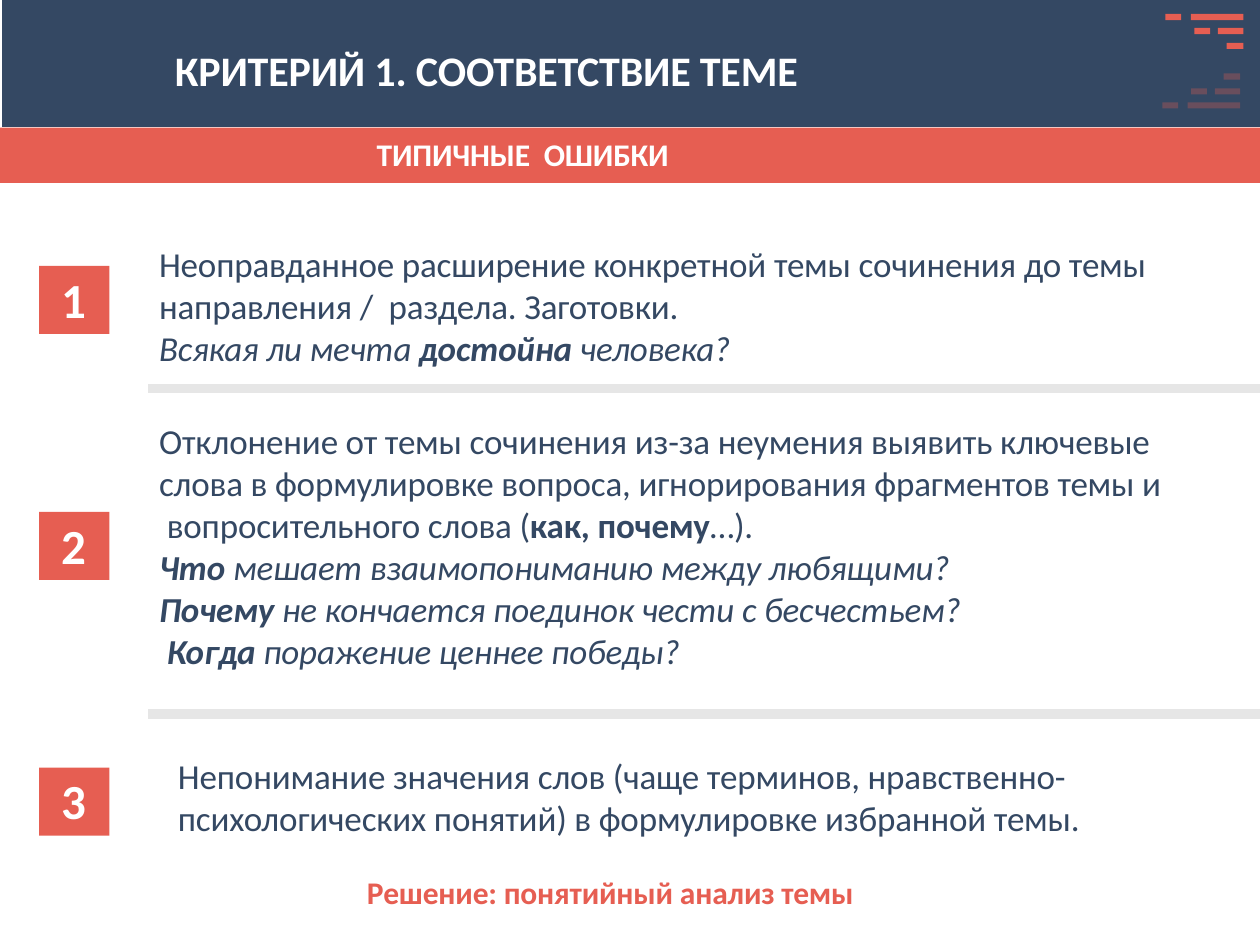
import pptx
import pptx.dml.color
import pptx.enum.shapes
import pptx.enum.text
import pptx.util

Pt = pptx.util.Pt
RGB = pptx.dml.color.RGBColor
NAVY = RGB(0x34, 0x48, 0x63)
CORAL = RGB(0xE6, 0x5E, 0x52)
GRAY = RGB(0xE6, 0xE6, 0xE6)
WHITE = RGB(0xFF, 0xFF, 0xFF)

# left, top, width of each dash in the corner
DASHES = [(666, 8, 9), (682.5, 16, 9), (701, 24.5, 9.5),
          (696, 16, 14.5), (680.5, 8, 30)]
DASH = 3.5

# A run is (text, style); b is bold, i is italic, \v breaks the line.
FIRST = [
    [("Неоправданное расширение конкретной темы сочинения до темы", "")],
    [("направления /  раздела. Заготовки.", "")],
    [("Всякая ли мечта ", "i"), ("достойна ", "bi"), ("человека?", "i")],
]
SECOND = [
    [("Отклонение от темы сочинения из-за неумения выявить ключевые \v"
      "слова в формулировке вопроса, игнорирования фрагментов темы и\v"
      " вопросительного слова (", ""), ("как, почему", "b"), ("…).", "")],
    [("Что ", "bi"), ("мешает взаимопониманию между любящими? \v", "i"),
     ("Почему ", "bi"), ("не кончается поединок чести с бесчестьем?\v", "i"),
     (" Когда ", "bi"), ("поражение ценнее победы?", "i")],
]
THIRD = [
    [("Непонимание значения слов (чаще терминов, нравственно-", "")],
    [("психологических понятий) в формулировке избранной темы.", "")],
]


def paint(shape, color):
    shape.shadow.inherit = False
    shape.fill.solid()
    shape.fill.fore_color.rgb = color
    shape.line.fill.background()


def outline(shapes, boxes, color, alpha=None):
    """Draw all boxes as one freeform; alpha is a percentage."""
    pen = None
    for x, y, w, h in boxes:
        left, top, right, low = Pt(x), Pt(y), Pt(x + w), Pt(y + h)
        if pen is None:
            pen = shapes.build_freeform(right, top)
        else:
            pen.move_to(right, top)
        pen.add_line_segments([(left, top), (left, low), (right, low)])
    shape = pen.convert_to_shape()
    paint(shape, color)
    if alpha is not None:
        tint = shape.fill._xPr.find(".//" + pptx.oxml.ns.qn("a:srgbClr"))
        node = pptx.oxml.parse_xml(
            f'<a:alpha {pptx.oxml.ns.nsdecls("a")} val="{alpha * 1000}"/>')
        tint.append(node)


def add_run(par, text, style):
    for n, part in enumerate(text.split("\v")):
        if n:
            par.add_line_break()
        if part:
            run = par.add_run()
            run.text = part
            run.font._element.set("spc", "-10")
            if "b" in style:
                run.font.bold = True
            if "i" in style:
                run.font.italic = True


def write(shape, pars, size, color, left=0.7, top=1.8):
    """Fill a shape with paragraphs, inset by left and top."""
    frame = shape.text_frame
    frame.word_wrap = True
    frame.vertical_anchor = pptx.enum.text.MSO_ANCHOR.TOP
    frame.margin_left, frame.margin_top = Pt(left), Pt(top)
    frame.margin_right = frame.margin_bottom = 0
    for n, runs in enumerate(pars):
        par = frame.add_paragraph() if n else frame.paragraphs[0]
        par.alignment = pptx.enum.text.PP_ALIGN.LEFT
        font = par.font
        font.name, font.size = "Calibri", Pt(size)
        font.color.rgb = color
        for text, style in runs:
            add_run(par, text, style)


def add_text(slide, box, *args, **inset):
    write(slide.shapes.add_textbox(*map(Pt, box)), *args, **inset)


def add_block(slide, box, text, size, **inset):
    kind = pptx.enum.shapes.MSO_SHAPE.RECTANGLE
    shape = slide.shapes.add_shape(kind, *map(Pt, box))
    paint(shape, CORAL)
    write(shape, [[(text, "b")]], size, WHITE, **inset)


def add_dashes(slide):
    """Draw the corner dashes and their faint mirror below."""
    shapes = slide.shapes.add_group_shape().shapes
    outline(shapes, [(x, y, w, DASH) for x, y, w in DASHES], CORAL)
    outline(shapes, [(x - 1.8, 66.5 - y, w, DASH) for x, y, w in DASHES],
            CORAL, 30)


def main():
    deck = pptx.Presentation()
    deck.slide_width, deck.slide_height = Pt(720), Pt(540)
    slide = deck.slides.add_slide(deck.slide_layouts[6])

    outline(slide.shapes, [(1.4, 0, 718.6, 72.7)], NAVY)
    add_text(slide, (0, 0, 720, 72.7),
             [[("КРИТЕРИЙ 1. СООТВЕТСТВИЕ ТЕМЕ", "b")]], 24, WHITE,
             left=100, top=25.6)
    add_dashes(slide)
    add_block(slide, (0, 72.9, 720, 31.7), "ТИПИЧНЫЕ  ОШИБКИ", 18,
              left=215.3, top=4.3)

    for n, top in enumerate((152, 292.5, 438.7), 1):
        add_block(slide, (22.4, top, 40.2, 38.9), str(n), 28,
                  left=13, top=1.8)
    add_text(slide, (90.2, 136.8, 570, 74), FIRST, 20, NAVY)
    add_text(slide, (90.2, 237.8, 580, 146), SECOND, 20, NAVY)
    add_text(slide, (101, 429.2, 522, 50), THIRD, 20, NAVY)
    for top in (219.4, 405.2):
        outline(slide.shapes, [(84.5, top, 635.5, 5.4)], GRAY)
    add_text(slide, (209, 496.8, 284, 24),
             [[("Решение: понятийный анализ темы", "b")]], 18, CORAL)

    deck.save("out.pptx")


if __name__ == "__main__":
    main()
